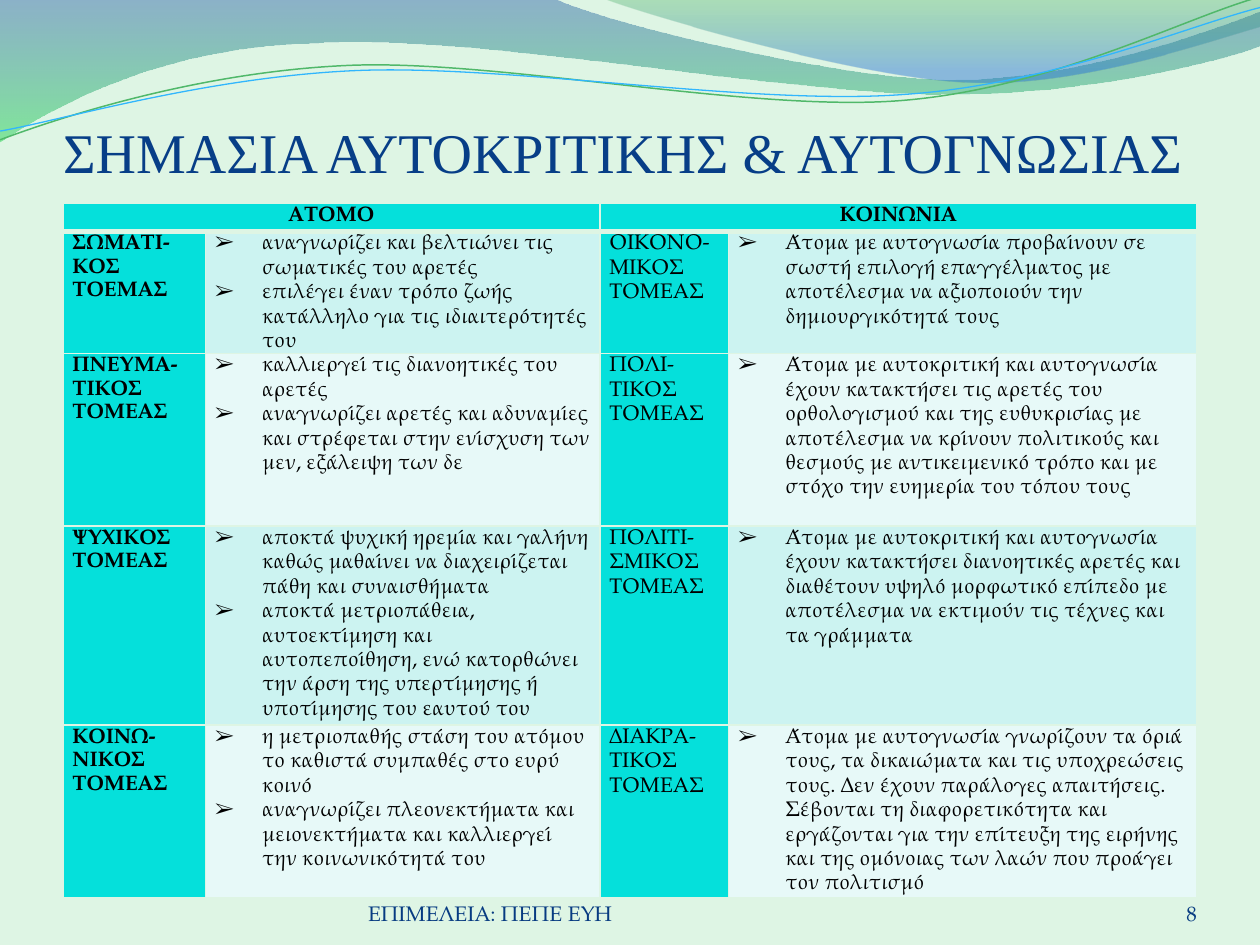
from lxml import etree
from pptx import Presentation, util as u
from pptx.dml.color import RGBColor
from pptx.enum import lang, text
from pptx.oxml import ns

Pt = u.Pt
BODY_FONT = "TeX Gyre Pagella"
MINT, TURQUOISE, NAVY = "DEF5E4", "05E0DB", "073B81"
ROW_TINTS = ("CCF3F1", "E7F9F8")
COLUMN_WIDTHS = (81.4, 225.4, 73.6, 267.4)
ROW_HEIGHTS = (16.2, 68.5, 98.6, 113.8, 98.6)

BANDS = [
    ([(0, 0), (316.8, -0.7), (342.7, 12.2, 478.1, 45.4, 545.8, 45.4),
      (614.2, 45.4, 689.8, 18.7, 720, 6.5), (720.7, 25.9),
      (707.8, 31.7, 626.4, 54.7, 537.1, 54), (447.8, 54, 275, 20.2, 185, 24.5),
      (92.9, 25.9, 33.1, 59.8, -0.7, 81.4), (0, 0)],
     [(0, "2960A7", 45), (1, "35DA5E", 55)]),
    ([(344.9, -0.7), (366.5, 7.9, 491, 44.6, 553.7, 46.8),
      (616.3, 49.7, 691.9, 23, 720, 15.1), (720, 0), (344.9, -0.7)],
     [(0, "36A752", 30), (0.8, "2472D3", 45)]),
]
RIPPLES = [
    ([(0, 79.9), (34.6, 67, 113.8, 41, 199.4, 37.4),
      (284.4, 33.8, 427, 64.1, 513.4, 57.6),
      (599.8, 51.1, 675.4, 10.8, 718.6, -1.4)], "50B86A", 0.85),
    ([(0, 74.9), (33.8, 69.1, 118.1, 43.9, 203.8, 40.3),
      (290.2, 36.7, 429.8, 60.5, 516.2, 54),
      (601.9, 48.2, 677.5, 15.1, 720, 4.3)], "31B6FD", 0.75),
]
SECTORS = [
    ("ΣΩΜΑΤΙ-ΚΟΣ ΤΟΕΜΑΣ",
     ["αναγνωρίζει και βελτιώνει τις σωματικές του αρετές",
      "επιλέγει έναν τρόπο ζωής κατάλληλο για τις ιδιαιτερότητές του"],
     "ΟΙΚΟΝΟ-ΜΙΚΟΣ ΤΟΜΕΑΣ",
     ["Άτομα με αυτογνωσία προβαίνουν σε σωστή επιλογή επαγγέλματος με "
      "αποτέλεσμα να αξιοποιούν την δημιουργικότητά τους"]),
    ("ΠΝΕΥΜΑ-ΤΙΚΟΣ ΤΟΜΕΑΣ",
     ["καλλιεργεί τις διανοητικές του αρετές",
      "αναγνωρίζει αρετές και αδυναμίες και στρέφεται στην ενίσχυση των μεν, "
      "εξάλειψη των δε"],
     "ΠΟΛΙ-ΤΙΚΟΣ ΤΟΜΕΑΣ",
     ["Άτομα με αυτοκριτική και αυτογνωσία έχουν κατακτήσει τις αρετές του "
      "ορθολογισμού και της ευθυκρισίας με αποτέλεσμα να κρίνουν πολιτικούς και "
      "θεσμούς με αντικειμενικό τρόπο και με στόχο την ευημερία του τόπου τους"]),
    ("ΨΥΧΙΚΟΣ ΤΟΜΕΑΣ",
     ["αποκτά ψυχική ηρεμία και γαλήνη καθώς μαθαίνει να διαχειρίζεται πάθη και "
      "συναισθήματα",
      "αποκτά μετριοπάθεια, αυτοεκτίμηση και αυτοπεποίθηση, ενώ κατορθώνει την "
      "άρση της υπερτίμησης ή υποτίμησης του εαυτού του"],
     "ΠΟΛΙΤΙ-ΣΜΙΚΟΣ ΤΟΜΕΑΣ",
     ["Άτομα με αυτοκριτική και αυτογνωσία έχουν κατακτήσει διανοητικές αρετές "
      "και διαθέτουν υψηλό μορφωτικό επίπεδο με αποτέλεσμα να εκτιμούν τις τέχνες "
      "και τα γράμματα"]),
    ("ΚΟΙΝΩ-ΝΙΚΟΣ ΤΟΜΕΑΣ",
     ["η μετριοπαθής στάση του ατόμου το καθιστά συμπαθές στο ευρύ κοινό",
      "αναγνωρίζει πλεονεκτήματα και μειονεκτήματα και καλλιεργεί την "
      "κοινωνικότητά του"],
     "ΔΙΑΚΡΑ-ΤΙΚΟΣ ΤΟΜΕΑΣ",
     ["Άτομα με αυτογνωσία γνωρίζουν τα όριά τους, τα δικαιώματα και τις "
      "υποχρεώσεις τους. Δεν έχουν παράλογες απαιτήσεις. Σέβονται τη "
      "διαφορετικότητα και εργάζονται για την επίτευξη της ειρήνης και της "
      "ομόνοιας των λαών που προάγει τον πολιτισμό"]),
]


def paint(color_format, value):
    """Set a colour from a hex string."""
    color_format.rgb = RGBColor.from_string(value)


def add_xml(parent, tag, **attributes):
    """Append a DrawingML element."""
    return etree.SubElement(parent, ns.qn(tag), attributes)


def add_curve(slide, segments, closed):
    """Draw an outline of straight pairs and Bezier sextuples, without a shadow."""
    points = [(Pt(segment[i]), Pt(segment[i + 1]))
              for segment in segments for i in range(0, len(segment), 2)]
    builder = slide.shapes.build_freeform(*points[0])
    builder.add_line_segments(points[1:], close=closed)
    curve = builder.convert_to_shape()
    curve.shadow.inherit = False
    strokes = iter(curve._element.xpath(".//a:lnTo"))
    for segment in segments[1:]:
        stroke = next(strokes)
        if len(segment) == 6:
            stroke.tag = ns.qn("a:cubicBezTo")
            for _ in range(2):
                extra = next(strokes)
                stroke.append(extra[0])
                extra.getparent().remove(extra)
    return curve


def add_band(slide, segments, stops):
    """Draw a translucent band shaded from top to bottom."""
    band = add_curve(slide, segments, True)
    band.line.fill.background()
    band.fill.gradient()
    band.fill.gradient_angle = 270
    for stop, (position, color, _) in zip(band.fill.gradient_stops, stops):
        stop.position = position
        paint(stop.color, color)
    for shade, (_, _, opacity) in zip(band._element.xpath(".//a:gs/a:srgbClr"), stops):
        add_xml(shade, "a:alpha", val=str(opacity * 1000))


def add_ripple(slide, segments, color, width):
    """Draw a thin wavy line."""
    ripple = add_curve(slide, segments, False)
    ripple.fill.background()
    paint(ripple.line.color, color)
    ripple.line.width = Pt(width)


def write(paragraph, words, color, size=12, font=BODY_FONT, bold=False, align="LEFT"):
    """Add one formatted run to a paragraph."""
    paragraph.alignment = getattr(text.PP_ALIGN, align)
    run = paragraph.add_run()
    run.text = words
    run.font.name, run.font.size, run.font.bold = font, Pt(size), bold
    run.font.language_id = lang.MSO_LANGUAGE_ID.GREEK
    paint(run.font.color, color)


def set_frame(frame, top=0):
    """Give a text frame wrapping, bottom anchoring and tight margins."""
    frame.word_wrap = True
    frame.auto_size = text.MSO_AUTO_SIZE.NONE
    frame.vertical_anchor = text.MSO_ANCHOR.BOTTOM
    frame.margin_left = frame.margin_right = frame.margin_bottom = 0
    frame.margin_top = Pt(top)


def add_title(slide, words):
    """Fill the title placeholder and bring it in front of the waves."""
    title = slide.shapes.title
    title.left, title.top, title.width, title.height = Pt(36), Pt(55.4), Pt(648), Pt(50.4)
    set_frame(title.text_frame, 3.6)
    write(title.text_frame.paragraphs[0], words, "073E87", 32, "Times New Roman")
    slide.shapes._spTree.append(title._element)


def add_footer(slide, words, left, width, align="LEFT"):
    """Add a footer text on the common bottom line."""
    footer = slide.shapes.add_textbox(Pt(left), Pt(500.4), Pt(width), Pt(28.8))
    set_frame(footer.text_frame)
    write(footer.text_frame.paragraphs[0], words, NAVY, align=align)


def fill_cell(cell, lines, fill, widths, bold=False, bulleted=False, align="LEFT"):
    """Write, border and fill one table cell."""
    cell.margin_left = cell.margin_right = Pt(5.4)
    cell.margin_top = cell.margin_bottom = 0
    for index, line in enumerate(lines):
        frame = cell.text_frame
        paragraph = frame.add_paragraph() if index else frame.paragraphs[0]
        paragraph.line_spacing = 1.15
        write(paragraph, line, "000000", bold=bold, align=align)
        if bulleted:
            properties = paragraph._p.get_or_add_pPr()
            properties.set("marL", str(Pt(27)))
            properties.set("indent", str(-Pt(27)))
            add_xml(properties, "a:buFont", typeface=BODY_FONT)
            add_xml(properties, "a:buChar", char="➢")
    borders = cell._tc.get_or_add_tcPr()
    for side, width in zip("LRTB", widths):
        border = add_xml(borders, f"a:ln{side}", w=str(Pt(width)))
        add_xml(add_xml(border, "a:solidFill"), "a:srgbClr", val=MINT)
    cell.fill.solid()
    paint(cell.fill.fore_color, fill)


def add_sector_table(slide):
    """Add the table of personal and social sectors."""
    table = slide.shapes.add_table(len(ROW_HEIGHTS), len(COLUMN_WIDTHS), Pt(36), Pt(116),
                                   Pt(sum(COLUMN_WIDTHS)), Pt(sum(ROW_HEIGHTS))).table
    for column, width in zip(table.columns, COLUMN_WIDTHS):
        column.width = Pt(width)
    for row, height in zip(table.rows, ROW_HEIGHTS):
        row.height = Pt(height)
    for column, heading in ((0, "ΑΤΟΜΟ"), (2, "ΚΟΙΝΩΝΙΑ")):
        table.cell(0, column).merge(table.cell(0, column + 1))
        fill_cell(table.cell(0, column), [heading], TURQUOISE, (1, 1, 1, 3), True,
                  align="CENTER")
    for row, sector in enumerate(SECTORS, 1):
        widths = (1, 1, 3 if row == 1 else 1, 1)
        for column, content in enumerate(sector):
            if column % 2:
                fill_cell(table.cell(row, column), content, ROW_TINTS[(row - 1) % 2],
                          widths, bulleted=True)
            else:
                fill_cell(table.cell(row, column), [content], TURQUOISE, widths,
                          bold=column == 0)


def main():
    """Build and save the slide."""
    deck = Presentation()
    deck.slide_width, deck.slide_height = Pt(720), Pt(540)
    slide = deck.slides.add_slide(deck.slide_layouts[5])
    slide.background.fill.solid()
    paint(slide.background.fill.fore_color, MINT)
    for band in BANDS:
        add_band(slide, *band)
    for ripple in RIPPLES:
        add_ripple(slide, *ripple)
    add_title(slide, "ΣΗΜΑΣΙΑ ΑΥΤΟΚΡΙΤΙΚΗΣ & ΑΥΤΟΓΝΩΣΙΑΣ")
    add_footer(slide, "ΕΠΙΜΕΛΕΙΑ: ΠΕΠΕ ΕΥΗ", 210.2, 264.2)
    add_footer(slide, "8", 624, 60, "RIGHT")
    add_sector_table(slide)
    deck.save("out.pptx")


if __name__ == "__main__":
    main()
